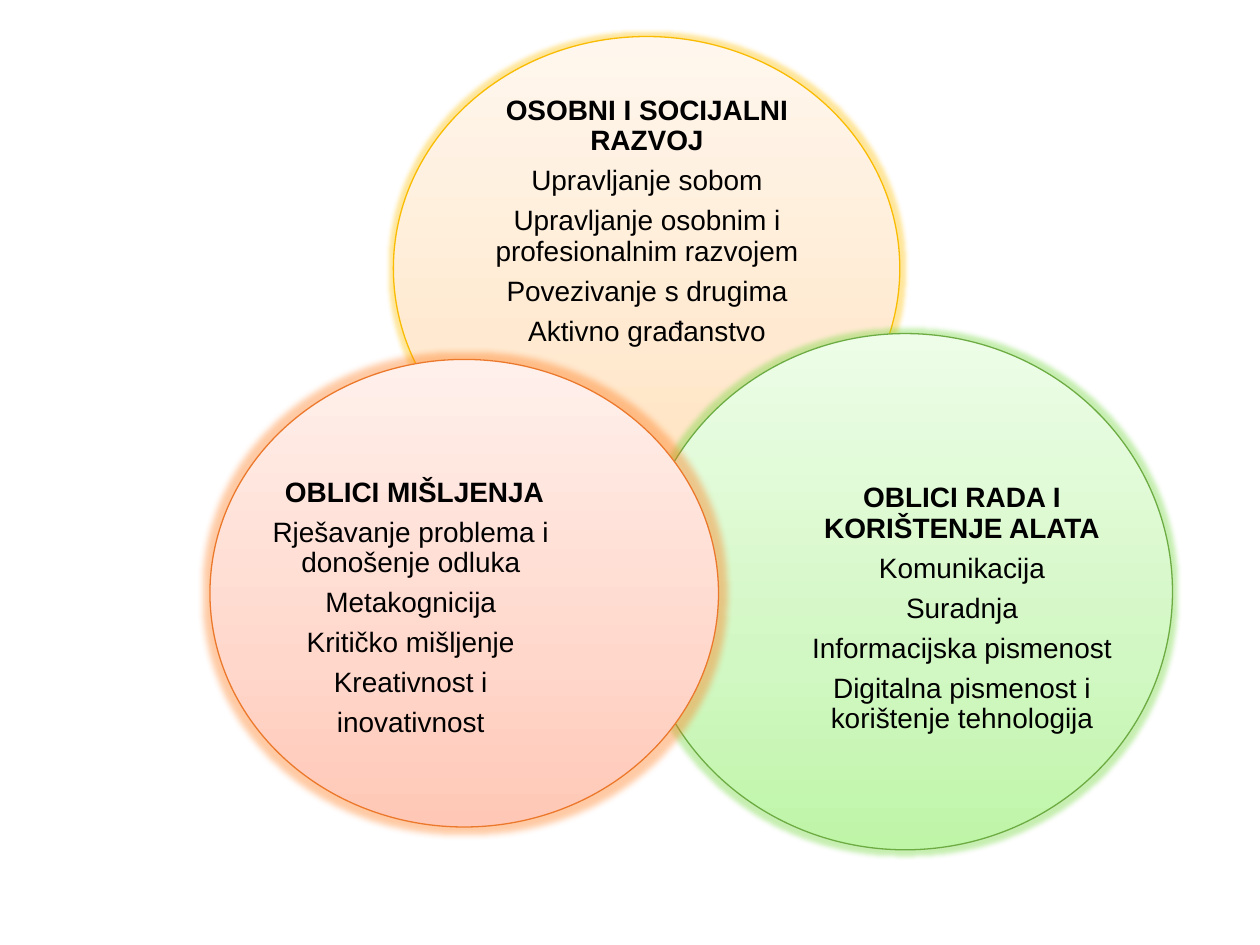
from copy import deepcopy

from lxml.etree import SubElement
from pptx import Presentation
from pptx.dml.color import RGBColor
from pptx.enum.shapes import MSO_SHAPE
from pptx.enum.text import MSO_ANCHOR, PP_ALIGN
from pptx.oxml.ns import qn
from pptx.util import Pt

THEME = {
    "font": "Arial",
    "size": 16,
    "text": "000000",
    "yellow": {"fill": ("FFE2BD", "FFEAD1", "FFF7EE"), "line": "F9BC00", "glow": "FFC000"},
    "green": {"fill": ("BEF5A7", "D1F7C2", "EDFDE7"), "line": "6DAC43", "glow": "70D63A"},
    "orange": {"fill": ("FFC7B6", "FFD7CB", "FFF0EB"), "line": "EC792B", "glow": "FF7A1A"},
}
GRADIENT_POSITIONS = (0, 0.35, 1)

# Boxes are left, top, width, height in points, from back to front.
CIRCLES = [
    {
        "colours": "yellow", "glow_radius": 5,
        "circle": (224.8, 20.9, 289.4, 265), "text_box": (263.5, 67, 212.4, 119.5),
        "title": "OSOBNI I SOCIJALNI RAZVOJ",
        "skills": ["Upravljanje sobom", "Upravljanje osobnim i profesionalnim razvojem",
                   "Povezivanje s drugima", "Aktivno građanstvo"],
    },
    {
        "colours": "green", "glow_radius": 5,
        "circle": (364.5, 190.6, 305.5, 295), "text_box": (457.9, 267.1, 183.6, 162),
        "title": "OBLICI RADA I KORIŠTENJE ALATA",
        "skills": ["Komunikacija", "Suradnja", "Informacijska pismenost",
                   "Digitalna pismenost i korištenje tehnologija"],
    },
    {
        "colours": "orange", "glow_radius": 8,
        "circle": (120, 205.4, 290.6, 267.2), "text_box": (147.6, 274.3, 174.2, 146.9),
        "title": " OBLICI MIŠLJENJA",
        "skills": ["Rješavanje problema i donošenje odluka", "Metakognicija",
                   "Kritičko mišljenje", "Kreativnost i", "inovativnost"],
    },
]


def points(box):
    return [Pt(value) for value in box]


def fill_gradient(shape, colours):
    """Fill from bottom to top with three colours."""
    shape.fill.gradient()
    shape.fill.gradient_angle = 90
    stop_list = shape.element.spPr.find(qn("a:gradFill")).find(qn("a:gsLst"))
    stop_list.insert(1, deepcopy(stop_list[0]))
    for stop, position, colour in zip(shape.fill.gradient_stops, GRADIENT_POSITIONS, colours):
        stop.position = position
        stop.color.rgb = RGBColor.from_string(colour)


def add_glow(shape, colour, radius):
    shape.shadow.inherit = False
    effects = shape.element.spPr.find(qn("a:effectLst"))
    glow = SubElement(effects, qn("a:glow"), rad=str(Pt(radius)))
    glow_colour = SubElement(glow, qn("a:srgbClr"), val=colour)
    SubElement(glow_colour, qn("a:alpha"), val="40000")


def add_circle(slide, box, colours, glow_radius):
    circle = slide.shapes.add_shape(MSO_SHAPE.OVAL, *points(box))
    fill_gradient(circle, colours["fill"])
    circle.line.color.rgb = RGBColor.from_string(colours["line"])
    circle.line.width = Pt(0.75)
    add_glow(circle, colours["glow"], glow_radius)


def add_skills(slide, box, title, skills):
    frame = slide.shapes.add_textbox(*points(box)).text_frame
    frame.word_wrap = True
    frame.vertical_anchor = MSO_ANCHOR.MIDDLE
    frame.margin_left = frame.margin_top = frame.margin_right = frame.margin_bottom = 0
    frame.text = "\n".join([title, *skills])
    for index, paragraph in enumerate(frame.paragraphs):
        paragraph.alignment = PP_ALIGN.CENTER
        paragraph.line_spacing = 0.9
        paragraph.space_after = Pt(THEME["size"] * 0.35)
        paragraph.font.name = THEME["font"]
        paragraph.font.size = Pt(THEME["size"])
        paragraph.font.bold = index == 0
        paragraph.font.color.rgb = RGBColor.from_string(THEME["text"])


def main():
    presentation = Presentation()
    presentation.slide_width, presentation.slide_height = Pt(720), Pt(540)
    slide = presentation.slides.add_slide(presentation.slide_layouts[6])
    for item in CIRCLES:
        add_circle(slide, item["circle"], THEME[item["colours"]], item["glow_radius"])
        add_skills(slide, item["text_box"], item["title"], item["skills"])
    presentation.save("out.pptx")


if __name__ == "__main__":
    main()
